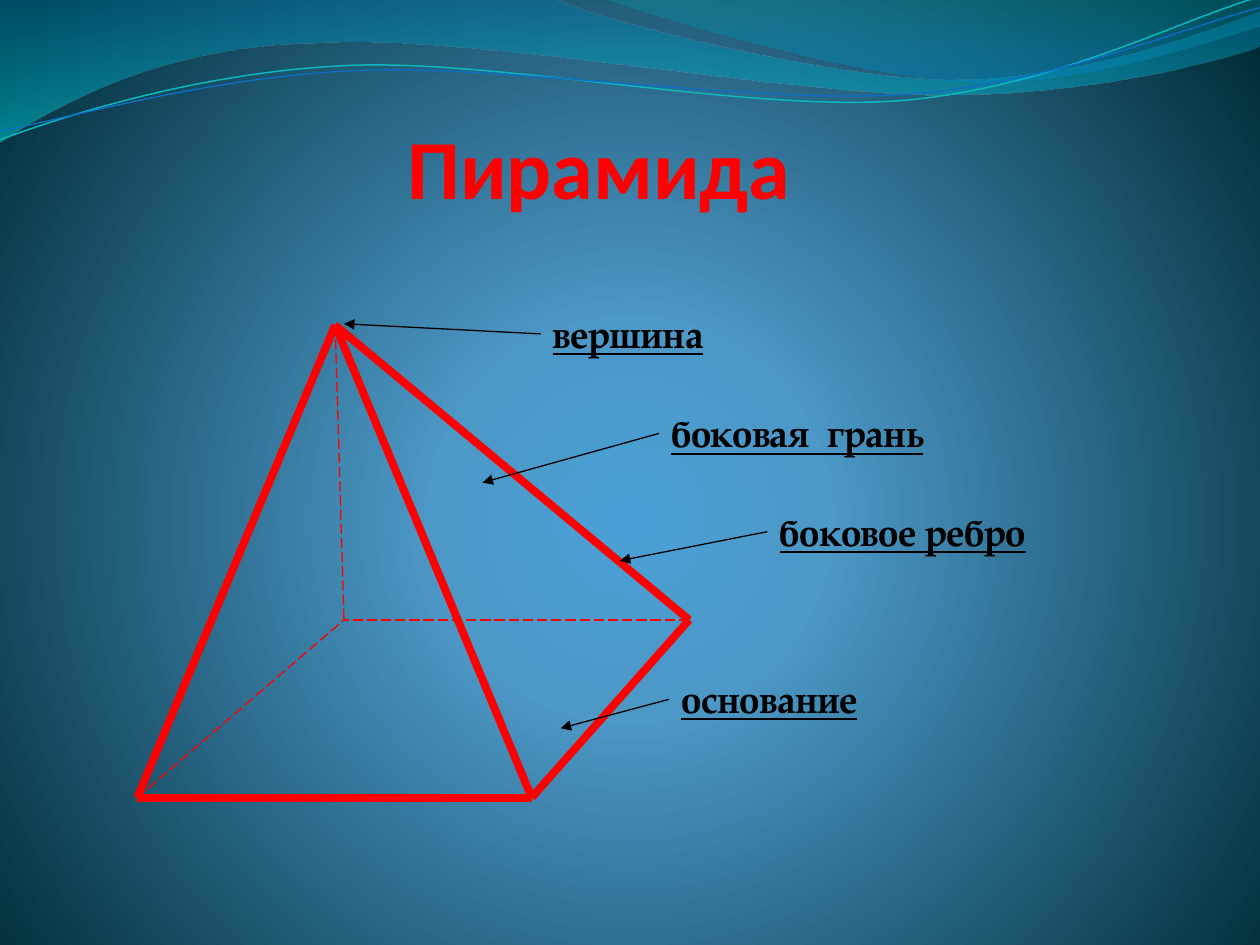
import math

import pptx
import pptx.dml.color
import pptx.enum.dml
import pptx.enum.shapes
import pptx.enum.text
import pptx.oxml.ns
import pptx.util
from lxml import etree

Inches = pptx.util.Inches
RGBColor = pptx.dml.color.RGBColor
qn = pptx.oxml.ns.qn

RED = RGBColor(0xFF, 0x00, 0x00)
BLACK = RGBColor(0x00, 0x00, 0x00)
SKY = RGBColor(0x4A, 0xA0, 0xD6)
STEEL = RGBColor(0x4C, 0x98, 0xC7)
NIGHT = RGBColor(0x00, 0x2C, 0x38)
OCEAN = RGBColor(0x00, 0x74, 0xA1)
AQUA = RGBColor(0x00, 0xC6, 0xCF)
TEAL = RGBColor(0x00, 0xA1, 0xA9)
AZURE = RGBColor(0x00, 0x8B, 0xBF)
CYAN_LINE = RGBColor(0x0A, 0xB8, 0xBF)
BLUE_LINE = RGBColor(0x0F, 0x6F, 0xC6)


def write_text(box, text, font, size, color, align=None, underline=None):
    para = box.text_frame.paragraphs[0]
    para.alignment = align
    span = para.add_run()
    span.text = text
    span.font.name = font
    span.font.size = pptx.util.Pt(size)
    span.font.bold = True
    span.font.underline = underline
    span.font.color.rgb = color


def set_gradient(fill, owner, stops, circle=None):
    """Stops are (position %, colour, opacity %); circle holds the focus rectangle."""
    fill.gradient()
    gradient = owner.find(".//" + qn("a:gradFill"))
    for child in list(gradient):
        gradient.remove(child)
    stop_list = etree.SubElement(gradient, qn("a:gsLst"))
    for position, color, opacity in stops:
        stop = etree.SubElement(stop_list, qn("a:gs"), pos=str(position * 1000))
        shade = etree.SubElement(stop, qn("a:srgbClr"), val=str(color))
        if opacity < 100:
            etree.SubElement(shade, qn("a:alpha"), val=str(opacity * 1000))
    if circle:
        focus = etree.SubElement(gradient, qn("a:path"), {"path": "circle"})
        sides = {side: str(value * 1000) for side, value in zip("ltrb", circle)}
        etree.SubElement(focus, qn("a:fillToRect"), sides)
    else:
        etree.SubElement(gradient, qn("a:lin"), ang="5400000", scaled="1")


def unrotate(point, frame, degrees):
    """Place a drawn point in the frame as it lies before the frame is turned."""
    left, top, width, height = frame
    x, y = point[0] - left - width / 2, point[1] - top - height / 2
    cosine, sine = math.cos(math.radians(degrees)), math.sin(math.radians(degrees))
    return x * cosine + y * sine + width / 2, y * cosine - x * sine + height / 2


class SlideMaker:
    heading_font = "Calibri"
    label_font = "TeX Gyre Pagella"

    def __init__(self, deck):
        self.page = deck.slides.add_slide(deck.slide_layouts[5])

    def background(self, stops, circle):
        set_gradient(self.page.background.fill, self.page.element, stops, circle)

    def title(self, text, left, top, width, height):
        box = self.page.shapes.title
        box.left, box.top, box.width, box.height = map(Inches, (left, top, width, height))
        frame = box.text_frame
        frame.margin_left = frame.margin_right = frame.margin_top = frame.margin_bottom = 0
        frame.vertical_anchor = pptx.enum.text.MSO_ANCHOR.BOTTOM
        write_text(box, text, self.heading_font, 48, RED,
                   align=pptx.enum.text.PP_ALIGN.CENTER)
        self.page.shapes.element.append(box.element)  # in front of the waves

    def wave(self, frame, start, segments, stops=None, color=None, weight=None, rotation=0):
        """A segment is a line (one point) or a Bezier curve (three points)."""
        builder = self.page.shapes.build_freeform(*map(Inches, start), scale=1.0)
        builder.add_line_segments([tuple(map(Inches, segment[-2:])) for segment in segments],
                                  close=bool(stops))
        shape = builder.convert_to_shape()
        shape.left, shape.top, shape.width, shape.height = map(Inches, frame)
        shape.rotation = rotation
        shape.shadow.inherit = False

        outline = shape.element.find(".//" + qn("a:pathLst"))[0]
        outline.set("w", str(shape.width))
        outline.set("h", str(shape.height))
        for step, numbers in zip(list(outline), [start, *segments]):
            for point in list(step):
                step.remove(point)
            if len(numbers) == 6:
                curve = etree.Element(qn("a:cubicBezTo"))
                outline.replace(step, curve)
                step = curve
            for point in zip(numbers[::2], numbers[1::2]):
                x, y = unrotate(point, frame, rotation)
                etree.SubElement(step, qn("a:pt"), x=str(Inches(x)), y=str(Inches(y)))

        if stops:
            set_gradient(shape.fill, shape.element, stops)
            shape.line.fill.background()
        else:
            shape.fill.background()
            shape.line.color.rgb = color
            shape.line.width = pptx.util.Pt(weight)

    def line(self, start, end, color, weight, dashed=False, arrow=False):
        line = self.page.shapes.add_connector(
            pptx.enum.shapes.MSO_CONNECTOR.STRAIGHT, *map(Inches, start + end))
        line.line.color.rgb = color
        line.line.width = pptx.util.Pt(weight)
        if dashed:
            line.line.dash_style = pptx.enum.dml.MSO_LINE.LONG_DASH
        properties = line.element.spPr
        if arrow:
            etree.SubElement(properties.find(qn("a:ln")), qn("a:tailEnd"), type="triangle")
        etree.SubElement(properties, qn("a:effectLst"))

    def label(self, text, left, top, width, target):
        box = self.page.shapes.add_textbox(*map(Inches, (left, top, width, 0.47)))
        box.text_frame.word_wrap = True
        box.text_frame.auto_size = pptx.enum.text.MSO_AUTO_SIZE.SHAPE_TO_FIT_TEXT
        write_text(box, text, self.label_font, 22, BLACK, underline=True)
        self.line((left, top + 0.24), target, BLACK, 0.75, arrow=True)


def main():
    deck = pptx.Presentation()
    deck.slide_width, deck.slide_height = Inches(10), Inches(7.5)
    maker = SlideMaker(deck)
    maker.background([(0, SKY, 100), (25, STEEL, 100), (100, NIGHT, 100)],
                     circle=(10, 110, 10, 100))

    # Waves along the top edge
    maker.wave((-0.01, -0.01, 10.02, 1.14), (0, -0.01),
               [(4.4, -0.01), (4.76, 0.17, 6.64, 0.63, 7.58, 0.63),
                (8.53, 0.63, 9.58, 0.26, 10, 0.09), (10.01, 0.36),
                (9.83, 0.44, 8.7, 0.76, 7.46, 0.75),
                (6.22, 0.75, 3.82, 0.28, 2.57, 0.34),
                (1.29, 0.35, 0.46, 0.83, -0.01, 1.13), (0, -0.01)],
               stops=[(0, OCEAN, 45), (100, AQUA, 55)])
    maker.wave((4.79, -0.01, 5.21, 0.7), (4.79, -0.01),
               [(5.09, 0.11, 6.82, 0.62, 7.69, 0.65),
                (8.56, 0.69, 9.61, 0.32, 10, 0.21), (10, 0), (4.79, -0.01)],
               stops=[(0, TEAL, 30), (80, AZURE, 45)])
    maker.wave((-0.02, 0.22, 10.02, 0.71), (0, 1.11),
               [(0.48, 0.93, 1.58, 0.57, 2.77, 0.52),
                (3.95, 0.47, 5.93, 0.89, 7.13, 0.8),
                (8.33, 0.71, 9.38, 0.15, 9.98, -0.02)],
               color=CYAN_LINE, weight=0.85, rotation=357.3)
    maker.wave((-0.02, 0.3, 10.03, 0.58), (0, 1.04),
               [(0.47, 0.96, 1.64, 0.61, 2.83, 0.56),
                (4.03, 0.51, 5.97, 0.83, 7.17, 0.75),
                (8.36, 0.67, 9.41, 0.21, 10, 0.06)],
               color=BLUE_LINE, weight=0.75, rotation=357.3)

    maker.title("Пирамида ", 0.58, 0.94, 8.5, 0.78)

    # Pyramid: visible edges, then hidden ones
    apex, front_left, front_right = (2.66, 2.58), (1.09, 6.33), (4.22, 6.33)
    back_right, back_left = (5.47, 4.92), (2.73, 4.92)
    for start, end in [(apex, front_left), (apex, front_right), (front_left, front_right),
                       (front_right, back_right), (apex, back_right)]:
        maker.line(start, end, RED, 4.5)
    for corner in (back_right, front_left, apex):
        maker.line(corner, back_left, RED, 0.75, dashed=True)

    # Labels with arrows to the parts
    maker.label("вершина", 4.29, 2.41, 1.64, target=(2.73, 2.57))
    maker.label("боковая  грань", 5.23, 3.2, 3.59, target=(3.83, 3.83))
    maker.label("основание", 5.31, 5.31, 2.27, target=(4.45, 5.78))
    maker.label("боковое ребро", 6.09, 3.98, 2.89, target=(4.92, 4.45))

    deck.save("out.pptx")


if __name__ == "__main__":
    main()
